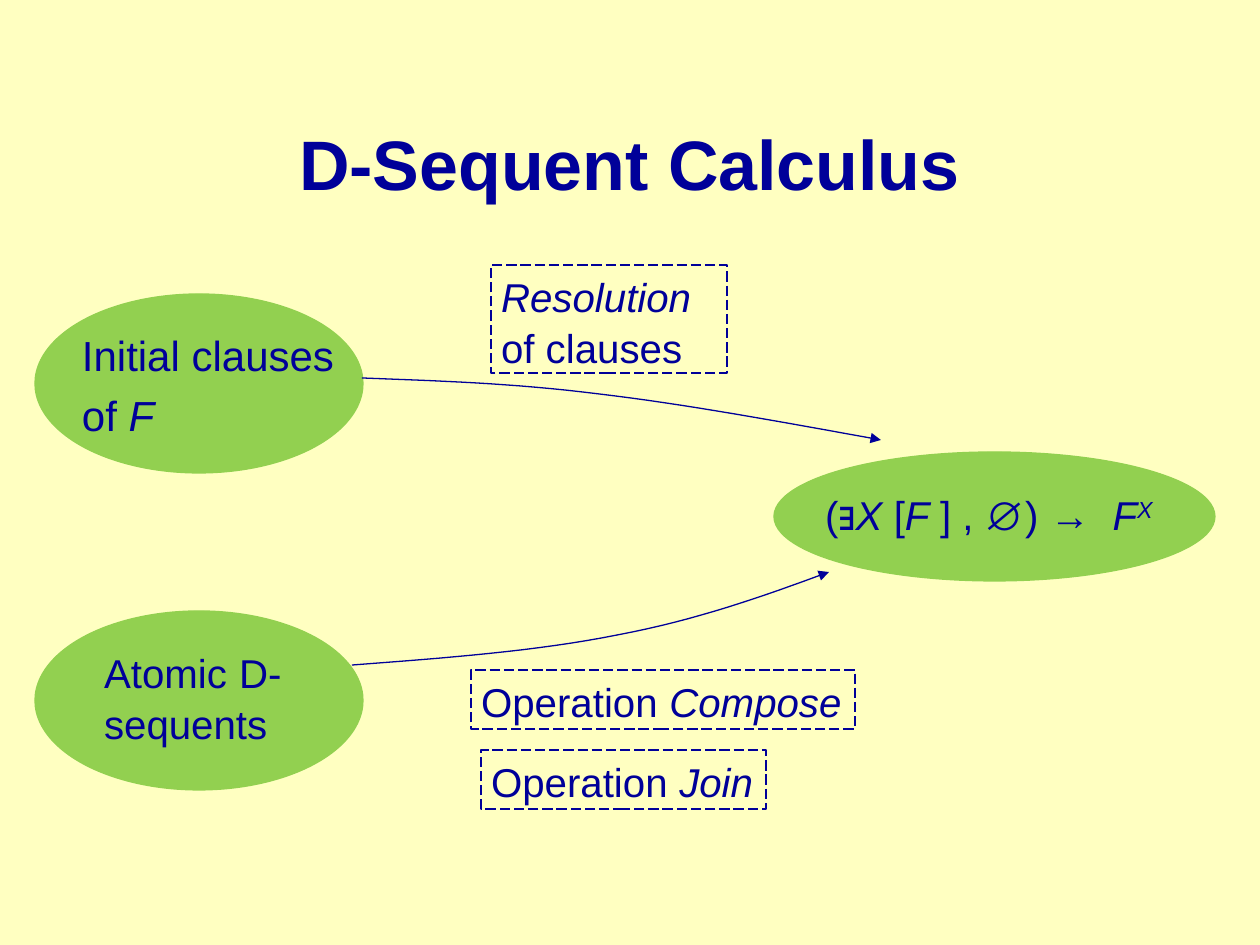
from pptx import Presentation
from pptx import util as u
from pptx.dml.color import RGBColor
from pptx.enum import dml, shapes, text
from pptx.oxml import parse_xml
from pptx.oxml.ns import nsdecls

PX = 914400 / 126  # EMU in one px
COLORS = {"bg": "FFFFC1", "ink": "000099", "node": "92D050"}
I, B = {"italic": True}, {"bold": True}

# Content: box in px, then paragraphs made of (words, format) runs
TITLE = ((94, 84, 1071, 158), [[("D-Sequent Calculus", B)]])
ELLIPSES = [(35, 294, 328, 179), (35, 611, 328, 179), (774, 452, 441, 129)]
INITIAL = ((69, 324, 280, 125),
           [[("Initial clauses", {})], [("of ", {}), ("F", I)]])
NODE_TEXTS = [
    ((94, 641, 198, 108), [[("Atomic D-sequents", {})]]),
    ((804, 483, 387, 59),
     [[(" (∃", {}), ("X ", I), ("[", {}), ("F ", I), ("] , ", {}), ("∅", B),
       (") →  ", {}), ("F", I), ("X", {"italic": True, "raised": True})]]),
]
RULES = [
    ((471, 670, 384, 59), [[("Operation ", {}), ("Compose", I)]]),
    ((481, 750, 285, 59), [[("Operation ", {}), ("Join", I)]]),
    ((491, 265, 236, 108), [[("Resolution", I), (" of clauses", {})]]),
]
# Arrows: start point, then cubic segments of two controls and an end
ARROWS = [
    ((362, 378), [((437, 381), (512, 383), (599, 394)),
                  ((684, 404), (782, 422), (881, 440))]),
    ((352, 665), [((445, 658), (538, 651), (617, 635)),
                  ((697, 620), (764, 596), (829, 572))]),
]


def emu(values):
    return [round(v * PX) for v in values]


def rgb(name):
    return RGBColor.from_string(COLORS[name])


def set_line(sp, color, dash=None):
    sp.line.color.rgb = rgb(color)
    sp.line.width = u.Pt(0.75)
    if dash:
        sp.line.dash_style = dash


def add_text(slide, box, paras, size=23, inset=(10, 5), wrap=True,
             align=text.PP_ALIGN.JUSTIFY, anchor=text.MSO_ANCHOR.TOP,
             before=4.6, spacing=1.05):
    sp = slide.shapes.add_textbox(*emu(box))
    tf = sp.text_frame
    x, y = emu(inset)
    frame = {"word_wrap": wrap, "vertical_anchor": anchor, "margin_left": x,
             "margin_right": x, "margin_top": y, "margin_bottom": y}
    for key, value in frame.items():
        setattr(tf, key, value)
    for n, runs in enumerate(paras):
        p = tf.add_paragraph() if n else tf.paragraphs[0]
        p.alignment, p.line_spacing = align, spacing
        p.space_before = u.Pt(before if n else 0)
        for words, fmt in runs:
            r = p.add_run()
            r.text = words
            font = {"name": "Arial", "size": u.Pt(size), **fmt}
            if font.pop("raised", False):
                r.font._element.set("baseline", "30000")
            for key, value in font.items():
                setattr(r.font, key, value)
            r.font.color.rgb = rgb("ink")
    return sp


def curve_points(start, segments, steps=16):
    points = [start]
    for c1, c2, end in segments:
        begin = points[-1]
        for k in range(1, steps + 1):
            t = k / steps
            s = 1 - t
            points.append(tuple(
                s**3 * a + 3 * s * s * t * b + 3 * s * t * t * c + t**3 * d
                for a, b, c, d in zip(begin, c1, c2, end)))
    return points


def add_arrow(slide, start, segments):
    first, *rest = [emu(pt) for pt in curve_points(start, segments)]
    builder = slide.shapes.build_freeform(*first)
    builder.add_line_segments(rest, close=False)
    sp = builder.convert_to_shape()
    sp.shadow.inherit = False
    sp.fill.background()
    set_line(sp, "ink")
    sp.line._get_or_add_ln().append(
        parse_xml(f'<a:tailEnd {nsdecls("a")} type="triangle"/>'))


def main():
    prs = Presentation()
    prs.slide_width, prs.slide_height = emu((1260, 945))
    slide = prs.slides.add_slide(prs.slide_layouts[6])
    slide.background.fill.solid()
    slide.background.fill.fore_color.rgb = rgb("bg")

    # Title
    add_text(slide, *TITLE, size=40, spacing=1, align=text.PP_ALIGN.CENTER,
             anchor=text.MSO_ANCHOR.MIDDLE)

    # Dashed rule boxes
    for box, paras in RULES:
        sp = add_text(slide, box, paras, wrap=len(paras[0]) > 1 and box[3] > 59)
        set_line(sp, "ink", dml.MSO_LINE.LONG_DASH)

    # Ellipses and their texts
    for box in ELLIPSES:
        sp = slide.shapes.add_shape(shapes.MSO_SHAPE.OVAL, *emu(box))
        sp.shadow.inherit = False
        sp.fill.solid()
        sp.fill.fore_color.rgb = rgb("node")
        set_line(sp, "node")
    add_text(slide, *INITIAL, size=24, inset=(13, 6), wrap=False, before=5.5,
             spacing=1)
    for box, paras in NODE_TEXTS:
        add_text(slide, box, paras)

    # Curved arrows
    for start, segments in ARROWS:
        add_arrow(slide, start, segments)

    prs.save("out.pptx")


if __name__ == "__main__":
    main()
